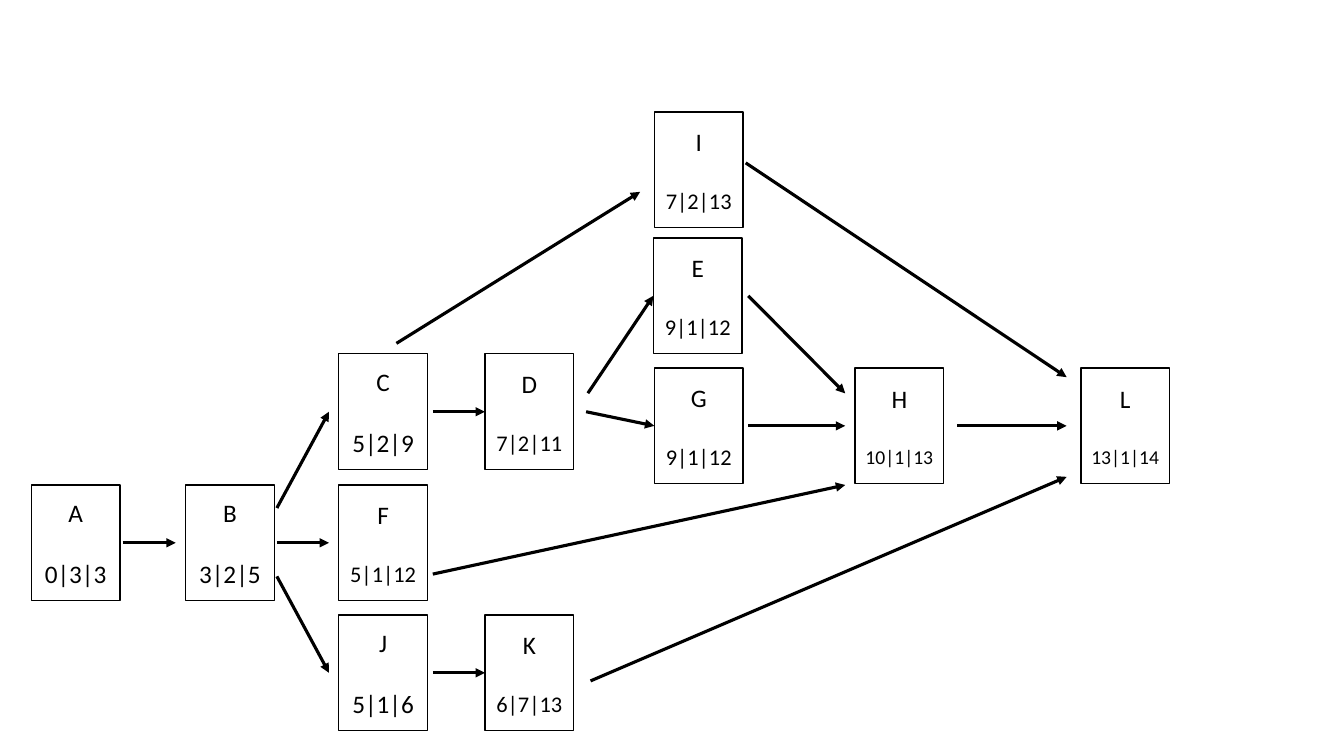
import pptx
import pptx.dml.color
import pptx.enum.shapes
import pptx.enum.text
import pptx.oxml
import pptx.oxml.ns
import pptx.util

BLACK = pptx.dml.color.RGBColor(0x00, 0x00, 0x00)
FONT = "Calibri"
NAME_SIZE = 18
LINE_GAP = 22
VALUE_SIZES = {5: 18, 6: 16, 7: 14}  # longer values take smaller type

# The grid and the box size, in inches
COLUMNS = [0.31, 1.84, 3.36, 4.81, 6.48, 6.49, 8.48, 10.72]
ROWS = {"top": 1.11, "high": 2.36, "upper": 3.51, "middle": 3.65,
        "lower": 4.81, "bottom": 6.10}
BOX_WIDTH, BOX_HEIGHT = 0.88, 1.15

# name: (column, row, "earliest start|duration|latest finish")
TASKS = {
    "A": (0, "lower", "0|3|3"),
    "B": (1, "lower", "3|2|5"),
    "C": (2, "upper", "5|2|9"),
    "F": (2, "lower", "5|1|12"),
    "J": (2, "bottom", "5|1|6"),
    "D": (3, "upper", "7|2|11"),
    "K": (3, "bottom", "6|7|13"),
    "E": (4, "high", "9|1|12"),
    "I": (5, "top", "7|2|13"),
    "G": (5, "middle", "9|1|12"),
    "H": (6, "middle", "10|1|13"),
    "L": (7, "middle", "13|1|14"),
}

# (task, share of its box across and down) at the tail, then at the head
DEPENDENCIES = [
    ("A", 1.03, 0.5, "B", -0.11, 0.5),
    ("B", 1.03, 0.2, "C", -0.11, 0.5),
    ("B", 1.03, 0.5, "F", -0.11, 0.5),
    ("B", 1.03, 0.79, "J", -0.11, 0.5),
    ("C", 1.06, 0.5, "D", 0, 0.5),
    ("J", 1.06, 0.5, "K", 0, 0.5),
    ("C", 0.65, -0.09, "I", -0.16, 0.69),
    ("D", 1.16, 0.34, "E", 0, 0.5),
    ("D", 1.14, 0.5, "G", 0, 0.5),
    ("F", 1.06, 0.77, "H", -0.11, 1.01),
    ("G", 1.06, 0.5, "H", -0.11, 0.5),
    ("E", 1.07, 0.5, "H", -0.11, 0.22),
    ("H", 1.15, 0.5, "L", -0.16, 0.5),
    ("I", 1.03, 0.44, "L", -0.16, 0.08),
    ("K", 1.19, 0.57, "L", -0.16, 0.94),
]


def point_at(task, across, down):
    """Return the slide point at the given shares of a task's box."""
    column, row, _ = TASKS[task]
    return (pptx.util.Inches(COLUMNS[column] + across * BOX_WIDTH),
            pptx.util.Inches(ROWS[row] + down * BOX_HEIGHT))


def add_task(slide, name):
    values = TASKS[name][2]
    left, top = point_at(name, 0, 0)
    box = slide.shapes.add_shape(
        pptx.enum.shapes.MSO_SHAPE.RECTANGLE, left, top,
        pptx.util.Inches(BOX_WIDTH), pptx.util.Inches(BOX_HEIGHT))
    box.shadow.inherit = False
    box.fill.background()
    box.line.color.rgb = BLACK
    box.line.width = pptx.util.Pt(1)

    frame = box.text_frame
    frame.vertical_anchor = pptx.enum.text.MSO_ANCHOR.MIDDLE
    frame.text = f"{name}\n{values}"
    for paragraph, size in zip(frame.paragraphs, (NAME_SIZE, VALUE_SIZES[len(values)])):
        paragraph.alignment = pptx.enum.text.PP_ALIGN.CENTER
        font = paragraph.runs[0].font
        font.name = FONT
        font.size = pptx.util.Pt(size)
        font.color.rgb = BLACK
    frame.paragraphs[1].space_before = pptx.util.Pt(LINE_GAP)


def add_arrow(slide, start, end):
    arrow = slide.shapes.add_connector(
        pptx.enum.shapes.MSO_CONNECTOR.STRAIGHT, *start, *end)
    arrow.line.color.rgb = BLACK
    arrow.line.width = pptx.util.Pt(2.25)
    properties = arrow._element.spPr
    namespace = pptx.oxml.ns.nsdecls("a")
    properties.get_or_add_ln().append(
        pptx.oxml.parse_xml(f'<a:tailEnd {namespace} type="triangle"/>'))
    properties.append(pptx.oxml.parse_xml(f"<a:effectLst {namespace}/>"))


def main():
    presentation = pptx.Presentation()
    presentation.slide_width = pptx.util.Inches(13.33)
    presentation.slide_height = pptx.util.Inches(7.5)
    slide = presentation.slides.add_slide(presentation.slide_layouts[6])
    for name in TASKS:
        add_task(slide, name)
    for dependency in DEPENDENCIES:
        add_arrow(slide, point_at(*dependency[:3]), point_at(*dependency[3:]))
    presentation.save("out.pptx")


if __name__ == "__main__":
    main()
